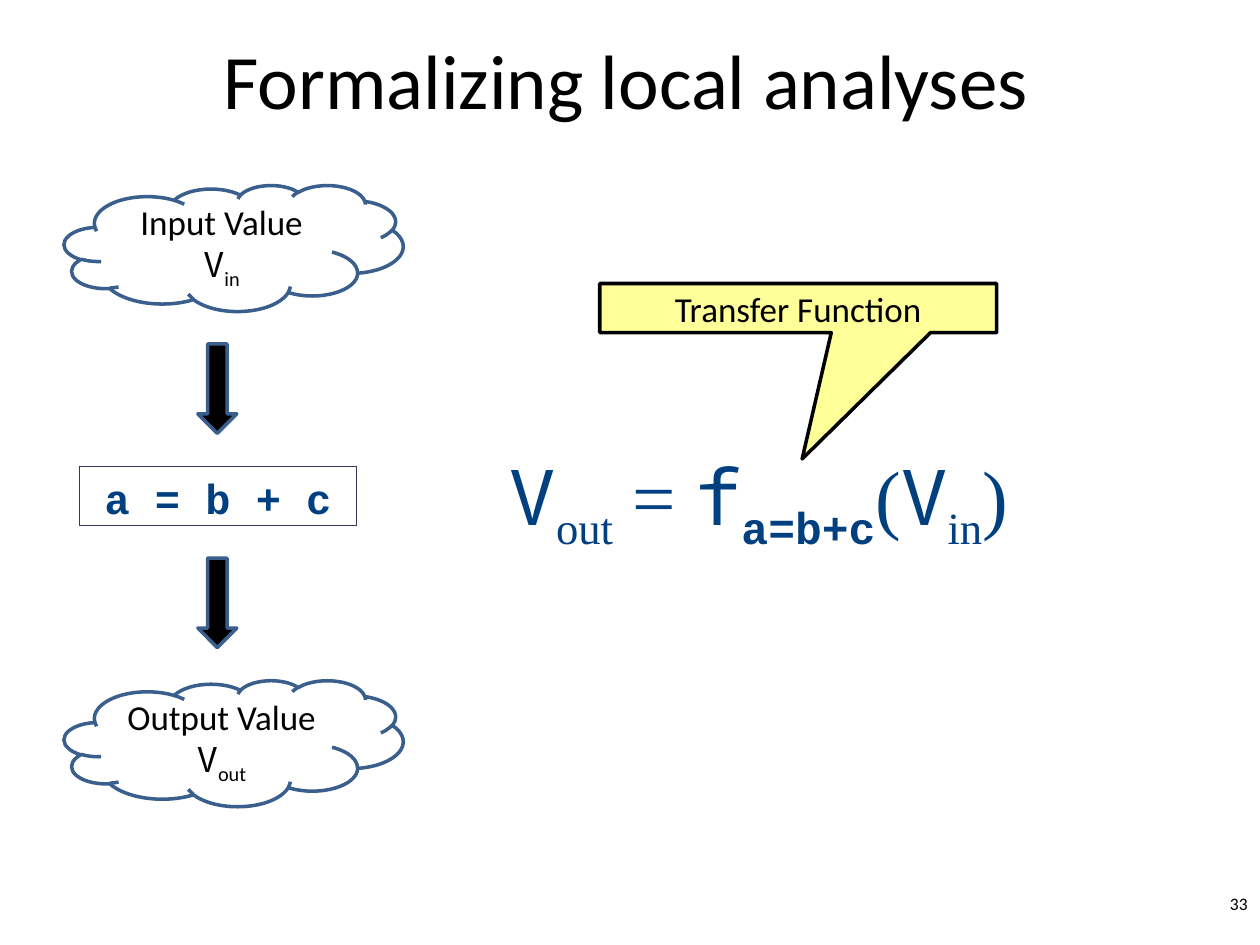
from dataclasses import dataclass
from typing import Optional

from pptx import Presentation
from pptx.dml.color import RGBColor
from pptx.enum.shapes import MSO_SHAPE as Preset
from pptx.enum.text import MSO_ANCHOR as Anchor, MSO_AUTO_SIZE as AutoSize, PP_ALIGN as Align
from pptx.util import Inches, Pt

BLACK = RGBColor(0x00, 0x00, 0x00)
NAVY = RGBColor(0x00, 0x40, 0x80)
STEEL = RGBColor(0x3A, 0x5F, 0x8C)
PURPLE = RGBColor(0x40, 0x31, 0x52)
YELLOW = RGBColor(0xFF, 0xFF, 0x99)
SANS, SERIF, CODE, SYMBOL = "Calibri", "Times New Roman", "Courier New", "Noto Sans Mono"


@dataclass(frozen=True)
class Box:
    left: float
    top: float
    width: float
    height: float

    def lengths(self) -> tuple:
        return tuple(Inches(n) for n in (self.left, self.top, self.width, self.height))


@dataclass(frozen=True)
class Piece:
    text: str
    font: str = SANS
    bold: bool = False
    subscript: bool = False
    break_after: bool = False


def write(shape, pieces: list[Piece], size: float, color: RGBColor = BLACK,
          align: Align = Align.CENTER, anchor: Anchor = Anchor.MIDDLE, wrap: bool = True) -> None:
    frame = shape.text_frame
    frame.word_wrap = wrap
    frame.vertical_anchor = anchor
    paragraph = frame.paragraphs[0]
    paragraph.alignment = align
    for piece in pieces:
        run = paragraph.add_run()
        run.text = piece.text
        run.font.name = piece.font
        run.font.size = Pt(size)
        run.font.bold = piece.bold
        run.font.color.rgb = color
        if piece.subscript:
            run.font._element.set("baseline", "-25000")
        if piece.break_after:
            paragraph.add_line_break()


def add_preset(slide, preset: Preset, box: Box, line: RGBColor,
               line_width: float = 2, fill: Optional[RGBColor] = None):
    shape = slide.shapes.add_shape(preset, *box.lengths())
    shape.shadow.inherit = False
    if fill is None:
        shape.fill.background()
    else:
        shape.fill.solid()
        shape.fill.fore_color.rgb = fill
    shape.line.color.rgb = line
    shape.line.width = Pt(line_width)
    return shape


def add_text(slide, box: Box):
    return slide.shapes.add_textbox(*box.lengths())


def add_value_cloud(slide, top: float, label: str, subscript: str) -> None:
    cloud = add_preset(slide, Preset.CLOUD, Box(0.51, top, 2.69, 1), STEEL)
    write(cloud, [Piece(label, break_after=True), Piece("V", SYMBOL),
                  Piece(subscript, subscript=True)], 20)


def add_flow(slide) -> None:
    statement = add_preset(slide, Preset.RECTANGLE, Box(0.63, 3.7, 2.2, 0.47), PURPLE, 0.75)
    write(statement, [Piece("a = b + c", CODE, bold=True)], 24, NAVY, anchor=Anchor.TOP)
    for top in (2.73, 4.43):
        add_preset(slide, Preset.DOWN_ARROW, Box(1.57, top, 0.31, 0.71), STEEL, fill=BLACK)
    add_value_cloud(slide, 5.4, "Output Value", "out")
    add_value_cloud(slide, 1.47, "Input Value", "in")


def add_transfer_function(slide) -> None:
    formula = add_text(slide, Box(3.82, 3.51, 4.56, 0.84))
    write(formula, [
        Piece("V", SYMBOL),
        Piece("out", SERIF, subscript=True),
        Piece(" = ", SERIF),
        Piece("f", SYMBOL),
        Piece("a=b+c", CODE, bold=True, subscript=True),
        Piece("(", SERIF),
        Piece("V", SYMBOL),
        Piece("in", SERIF, subscript=True),
        Piece(") ", SERIF),
    ], 44, NAVY, anchor=Anchor.TOP, wrap=False)
    formula.text_frame.auto_size = AutoSize.SHAPE_TO_FIT_TEXT

    callout = add_preset(slide, Preset.RECTANGULAR_CALLOUT, Box(4.76, 2.25, 3.15, 0.39),
                         BLACK, fill=YELLOW)
    callout.adjustments[0] = 0.01
    callout.adjustments[1] = 3.07
    write(callout, [Piece("Transfer Function")], 20)


def main() -> None:
    presentation = Presentation()
    presentation.slide_width = Inches(10)
    presentation.slide_height = Inches(7.5)
    slide = presentation.slides.add_slide(presentation.slide_layouts[6])

    title = add_text(slide, Box(0.72, 0, 8.5, 1.25))
    write(title, [Piece("Formalizing local analyses")], 44)
    page_number = add_text(slide, Box(7.92, 7.04, 2.08, 0.3))
    write(page_number, [Piece("33")], 10, align=Align.RIGHT, anchor=Anchor.TOP)
    add_flow(slide)
    add_transfer_function(slide)
    presentation.save("out.pptx")


if __name__ == "__main__":
    main()
